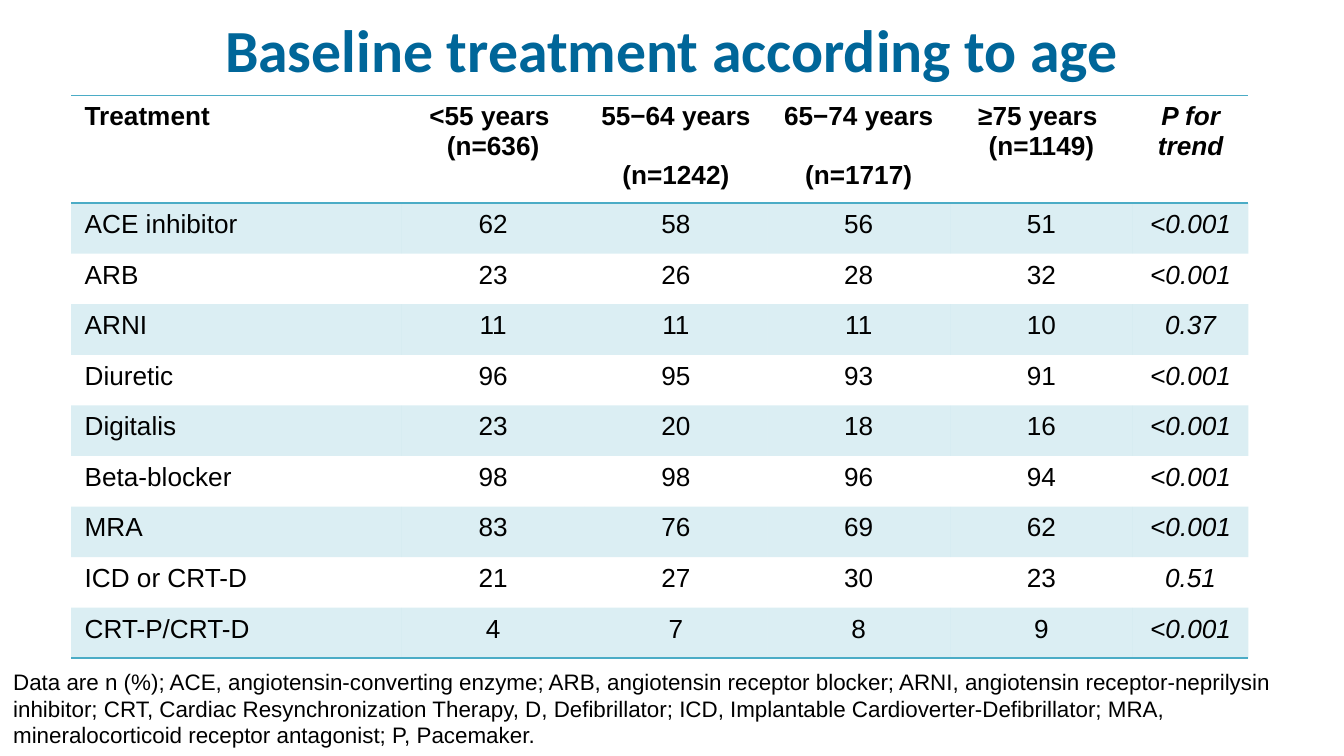
from copy import deepcopy

from lxml import etree
from pptx import Presentation
from pptx.dml.color import RGBColor
from pptx.enum.text import MSO_ANCHOR, MSO_AUTO_SIZE, PP_ALIGN
from pptx.oxml.ns import qn
from pptx.util import Inches, Pt

LEFT, CENTER = PP_ALIGN.LEFT, PP_ALIGN.CENTER
TOP, MIDDLE = MSO_ANCHOR.TOP, MSO_ANCHOR.MIDDLE
FIT_SHAPE = MSO_AUTO_SIZE.SHAPE_TO_FIT_TEXT

BLACK = RGBColor(0x00, 0x00, 0x00)
BLUE = RGBColor(0x00, 0x66, 0x99)
TEAL = RGBColor(0x4B, 0xAC, 0xC6)
TINT_PERCENT = 20

TITLE_FONT = {"name": "Calibri", "size": Pt(32), "bold": True}
TABLE_FONT = {"name": "Arial", "size": Pt(14)}
NOTE_FONT = {"name": "Arial", "size": Pt(12)}

TITLE = "Baseline treatment according to age"
NOTE = (
    "Data are n (%); ACE, angiotensin-converting enzyme; ARB, angiotensin receptor "
    "blocker; ARNI, angiotensin receptor-neprilysin inhibitor; CRT, Cardiac "
    "Resynchronization Therapy, D, Defibrillator; ICD, Implantable "
    "Cardioverter-Defibrillator; MRA, mineralocorticoid receptor antagonist; "
    "P, Pacemaker."
)
ROWS = [
    ("Treatment", "<55 years \v(n=636)", "55−64 years \v(n=1242)",
     "65−74 years \v(n=1717)", "≥75 years \v(n=1149)", "P for trend"),
    ("ACE inhibitor", "62", "58", "56", "51", "<0.001"),
    ("ARB", "23", "26", "28", "32", "<0.001"),
    ("ARNI", "11", "11", "11", "10", "0.37"),
    ("Diuretic", "96", "95", "93", "91", "<0.001"),
    ("Digitalis", "23", "20", "18", "16", "<0.001"),
    ("Beta-blocker", "98", "98", "96", "94", "<0.001"),
    ("MRA", "83", "76", "69", "62", "<0.001"),
    ("ICD or CRT-D", "21", "27", "30", "23", "0.51"),
    ("CRT-P/CRT-D", "4", "7", "8", "9", "<0.001"),
]
COL_WIDTHS = [2.46] + [1.36] * 4 + [0.86]
TABLE_HEIGHT, HEADER_HEIGHT = 4.03, 0.64
BODY_ROWS = len(ROWS) - 1
ROW_HEIGHTS = [HEADER_HEIGHT] + [(TABLE_HEIGHT - HEADER_HEIGHT) / BODY_ROWS] * BODY_ROWS


def write(tf, text, align, color, **font):
    """Fill a text frame with one formatted paragraph, line breaks included."""
    p = tf.paragraphs[0]
    p.text = text
    p.alignment = align
    for r in p.runs:
        r.font.color.rgb = color
        for name, value in font.items():
            setattr(r.font, name, value)
    for br in p._p.findall(qn("a:br")):
        br.append(deepcopy(p.runs[0]._r.rPr))


def add_text(slide, box, text, align, color, anchor, font):
    """Add a wrapping text box in the given box."""
    tf = slide.shapes.add_textbox(*map(Inches, box)).text_frame
    tf.word_wrap = True
    tf.vertical_anchor = anchor
    write(tf, text, align, color, **font)
    return tf


def set_borders(cell, ruled):
    """Draw the ruled sides of a cell and hide the others."""
    tc_pr = cell._tc.get_or_add_tcPr()
    for side in "LRTB":
        ln = etree.SubElement(tc_pr, qn(f"a:ln{side}"), w=str(Pt(1)))
        if side in ruled:
            fill = etree.SubElement(ln, qn("a:solidFill"))
            etree.SubElement(fill, qn("a:srgbClr"), val=str(TEAL))
        else:
            etree.SubElement(ln, qn("a:noFill"))


def set_fill(cell, tinted):
    """Give a cell a translucent tint or no fill."""
    if not tinted:
        cell.fill.background()
        return
    cell.fill.solid()
    cell.fill.fore_color.rgb = TEAL
    color = cell._tc.tcPr.find(f"{qn('a:solidFill')}/{qn('a:srgbClr')}")
    etree.SubElement(color, qn("a:alpha"), val=str(TINT_PERCENT * 1000))


def add_treatment_table(slide, left, top):
    """Add the table of treatments by age group."""
    table = slide.shapes.add_table(
        len(ROWS), len(COL_WIDTHS), Inches(left), Inches(top),
        Inches(sum(COL_WIDTHS)), Inches(TABLE_HEIGHT)).table
    table.first_row = table.horz_banding = False
    for column, width in zip(table.columns, COL_WIDTHS):
        column.width = Inches(width)
    for row, height in zip(table.rows, ROW_HEIGHTS):
        row.height = Inches(height)
    last_col = len(COL_WIDTHS) - 1
    rules = {0: "TB", 1: "T", BODY_ROWS: "B"}
    for i, values in enumerate(ROWS):
        for j, value in enumerate(values):
            cell = table.cell(i, j)
            set_borders(cell, rules.get(i, ""))
            set_fill(cell, i % 2 == 1)
            write(cell.text_frame, value, CENTER if j else LEFT, BLACK,
                  bold=i == 0, italic=j == last_col, **TABLE_FONT)


def main():
    """Build the slide and save it."""
    prs = Presentation()
    prs.slide_width = Inches(10)
    prs.slide_height = prs.slide_width * 9 // 16
    slide = prs.slides.add_slide(prs.slide_layouts[6])
    add_text(slide, (0, 0.05, 10, 0.62), TITLE, CENTER, BLUE, MIDDLE, TITLE_FONT)
    add_treatment_table(slide, 0.53, 0.71)
    note = add_text(slide, (0, 4.92, 10, 0.71), NOTE, LEFT, BLACK, TOP, NOTE_FONT)
    note.auto_size = FIT_SHAPE
    prs.save("out.pptx")


if __name__ == "__main__":
    main()
